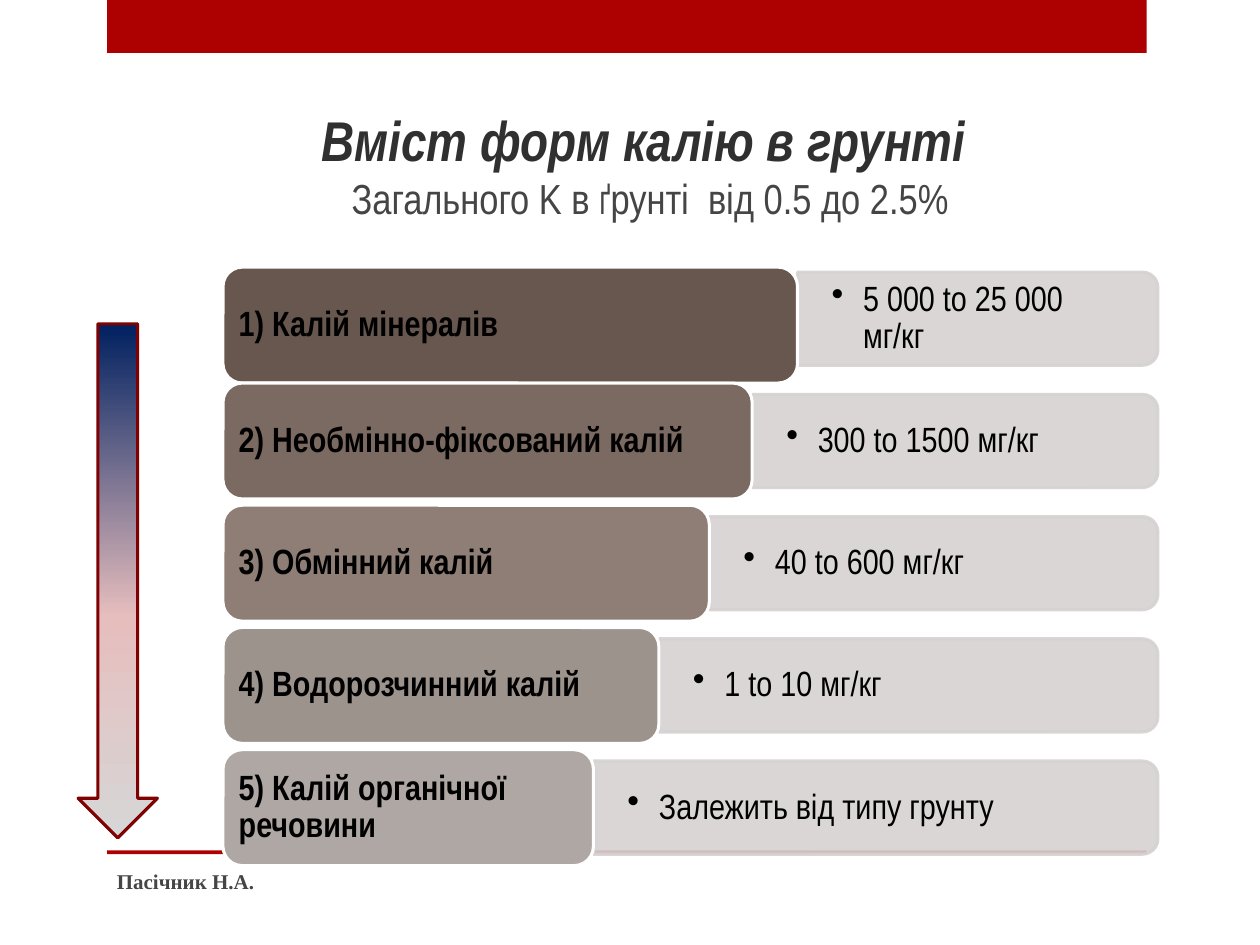
from copy import deepcopy
from dataclasses import dataclass

from pptx import Presentation
from pptx.dml.color import RGBColor
from pptx.enum.shapes import MSO_SHAPE
from pptx.enum.text import MSO_ANCHOR, MSO_AUTO_SIZE, PP_ALIGN
from pptx.oxml.ns import qn
from pptx.util import Inches, Pt

RECT = MSO_SHAPE.RECTANGLE
ROUNDED = MSO_SHAPE.ROUNDED_RECTANGLE
ROUNDED_END = MSO_SHAPE.ROUND_2_SAME_RECTANGLE
DOWN_ARROW = MSO_SHAPE.DOWN_ARROW
MIDDLE, BOTTOM = MSO_ANCHOR.MIDDLE, MSO_ANCHOR.BOTTOM
LEFT, CENTER = PP_ALIGN.LEFT, PP_ALIGN.CENTER
TITLE_ONLY = 5


@dataclass(frozen=True)
class Theme:
    font: str = "Arial Narrow"
    footer_font: str = "Times New Roman"
    accent: str = "AD0101"
    arrow_line: str = "800101"
    arrow_stops: tuple = ((0, "002060"), (0.57, "E7BEBE"), (1, "D6D6D6"))
    value_fill: str = "D5D2D1"
    white: str = "FFFFFF"
    black: str = "000000"
    heading: str = "303030"
    muted: str = "454545"
    title_size: int = 32
    subtitle_size: int = 24
    body_size: int = 20
    footer_size: int = 12
    line_width: float = 1.75


class SlideBuilder:
    def __init__(self, slide, theme):
        self.slide = slide
        self.theme = theme

    def run(self, paragraph, text, size, color, bold=False, italic=False, font=None):
        run = paragraph.add_run()
        run.text = text
        run.font.name = font or self.theme.font
        run.font.size = Pt(size)
        run.font.bold, run.font.italic = bold, italic
        run.font.color.rgb = RGBColor.from_string(color)

    def frame(self, shape, insets, anchor=MIDDLE):
        """Set wrapping, anchor and (left, top, right, bottom) insets in inches."""
        frame = shape.text_frame
        frame.word_wrap = True
        frame.auto_size = MSO_AUTO_SIZE.NONE
        frame.vertical_anchor = anchor
        (frame.margin_left, frame.margin_top,
         frame.margin_right, frame.margin_bottom) = map(Inches, insets)
        return frame

    def shape(self, kind, box, fill=None, line=None):
        shape = self.slide.shapes.add_shape(kind, *map(Inches, box))
        shape.shadow.inherit = False
        if fill:
            shape.fill.solid()
            shape.fill.fore_color.rgb = RGBColor.from_string(fill)
        if line:
            shape.line.color.rgb = RGBColor.from_string(line)
            shape.line.width = Pt(self.theme.line_width)
        else:
            shape.line.fill.background()
        return shape

    def title(self, box, heading, subtitle):
        t = self.theme
        title = self.slide.shapes.title
        title.left, title.top, title.width, title.height = map(Inches, box)
        paragraph = self.frame(title, (0, 0.05, 0, 0), BOTTOM).paragraphs[0]
        paragraph.alignment = CENTER
        self.run(paragraph, heading, t.title_size, t.heading, bold=True, italic=True)
        paragraph.add_line_break()
        self.run(paragraph, subtitle, t.subtitle_size, t.muted)

    def text_box(self, box, insets):
        shape = self.slide.shapes.add_textbox(*map(Inches, box))
        return self.frame(shape, insets).paragraphs[0]

    def value_bar(self, left, right, middle, text):
        """Draw a bar with its right end rounded, and a bulleted value on it."""
        t = self.theme
        thickness, length = 0.74, right - left
        box = ((left + right - thickness) / 2, middle - length / 2, thickness, length)
        bar = self.shape(ROUNDED_END, box, t.value_fill, t.value_fill)
        bar.rotation = 90
        for color in bar._element.spPr.iter(qn("a:srgbClr")):
            color.makeelement(qn("a:alpha"))
            alpha = color.makeelement(qn("a:alpha"), {"val": "90000"})
            color.append(alpha)

        height = 0.67
        paragraph = self.text_box((left, middle - height / 2, length - 0.03, height),
                                  (0.27, 0.14, 0.27, 0.14))
        properties = paragraph._p.get_or_add_pPr()
        properties.set("marL", str(Inches(0.25)))
        properties.set("indent", str(-Inches(0.25)))
        properties.append(properties.makeelement(qn("a:buChar"), {"char": "•"}))
        paragraph.line_spacing = 0.9
        self.run(paragraph, text, t.body_size, t.black)

    def label(self, box, text, fill):
        t = self.theme
        label = self.shape(ROUNDED, box, fill, t.white)
        paragraph = self.frame(label, (0.08, 0.04, 0.08, 0.04)).paragraphs[0]
        paragraph.alignment = LEFT
        paragraph.line_spacing = 0.9
        self.run(paragraph, text, t.body_size, t.black, bold=True)

    def gradient_arrow(self, box):
        t = self.theme
        arrow = self.shape(DOWN_ARROW, box, line=t.arrow_line)
        arrow.fill.gradient()
        arrow.fill.gradient_angle = 270
        stop_list = arrow._element.spPr.find(".//" + qn("a:gsLst"))
        stop_list.append(deepcopy(stop_list[-1]))
        for stop, (position, color) in zip(arrow.fill.gradient_stops, t.arrow_stops):
            stop.position = position
            stop.color.rgb = RGBColor.from_string(color)

    def footer(self, box, text):
        t = self.theme
        paragraph = self.text_box(box, (0.1, 0.05, 0.1, 0.05))
        self.run(paragraph, text, t.footer_size, t.muted, bold=True, font=t.footer_font)


# label, value, label width, label colour
POTASSIUM_FORMS = (
    ("1) Калій мінералів", "5 000 to 25 000 мг/кг", 4.56, "67574E"),
    ("2) Необмінно-фіксований калій", "300 to 1500 мг/кг", 4.2, "7B6A61"),
    ("3) Обмінний калій", "40 to 600 мг/кг", 3.86, "8E7E75"),
    ("4) Водорозчинний калій", "1 to 10 мг/кг", 3.46, "9D938D"),
    ("5) Калій органічної  речовини", "Залежить від типу грунту", 2.94, "AEA7A4"),
)


def main():
    presentation = Presentation()
    presentation.slide_width, presentation.slide_height = Inches(10), Inches(7.5)
    slide = presentation.slides.add_slide(presentation.slide_layouts[TITLE_ONLY])
    theme = Theme()
    builder = SlideBuilder(slide, theme)

    for top, height in ((0, 0.42), (6.75, 0.03)):
        builder.shape(RECT, (0.85, top, 8.25, height), theme.accent)

    label_left, label_height, bars_right = 1.77, 0.92, 9.19
    first_middle, row_step = 2.53, 0.97
    for row, (name, value, width, color) in enumerate(POTASSIUM_FORMS):
        middle = first_middle + row * row_step
        builder.value_bar(label_left + width, bars_right, middle, value)
        # The first label sits slightly lower, touching the second one.
        label_top = middle - label_height / 2 + (0.05 if row == 0 else 0)
        builder.label((label_left, label_top, width, label_height), name, color)

    builder.title((0.66, 0.52, 9, 1.25), "Вміст форм калію в грунті ",
                  "Загального K в ґрунті  від 0.5 до 2.5%")
    builder.gradient_arrow((0.62, 2.57, 0.63, 4.08))
    builder.footer((0.83, 6.79, 5.33, 0.4), "Пасічник Н.А.")
    presentation.save("out.pptx")


if __name__ == "__main__":
    main()
